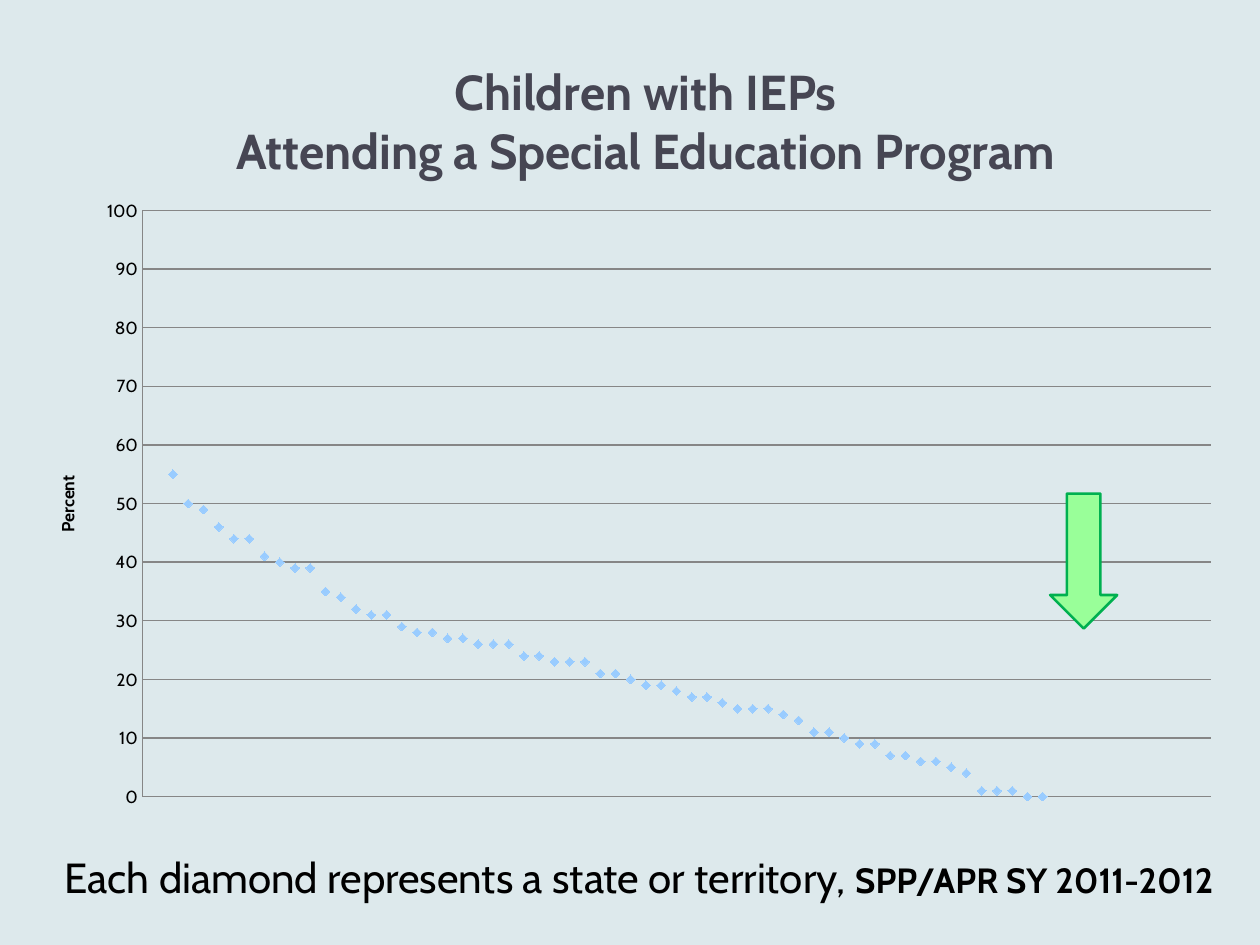
import pptx
import pptx.chart.data
import pptx.dml.color
import pptx.enum.chart
import pptx.enum.shapes
import pptx.enum.text
import pptx.oxml
import pptx.oxml.ns
from pptx.util import Cm, Pt

RGBColor = pptx.dml.color.RGBColor
BACKGROUND = RGBColor(0xDD, 0xE9, 0xEC)
TITLE_COLOR = RGBColor(0x46, 0x46, 0x53)
BLACK = RGBColor(0, 0, 0)
GRID = RGBColor(0x86, 0x86, 0x86)
DIAMOND = RGBColor(0x99, 0xCC, 0xFF)
ARROW_FILL = RGBColor(0x99, 0xFF, 0x99)
ARROW_LINE = RGBColor(0x00, 0xB0, 0x50)
FONT = "Cabin"

TITLE_LINES = ["Children with IEPs", "Attending a Special Education Program"]
CAPTION = [
    ("Each diamond represents a state or territory, ", 24, False),
    ("SPP/APR SY 2011-2012", 20, True),
]
# The first rank is empty, which keeps the diamonds off the axis.
PERCENTS = [
    None,
    55, 50, 49, 46, 44, 44, 41, 40, 39, 39, 35, 34, 32, 31, 31, 29, 28, 28, 27, 27,
    26, 26, 26, 24, 24, 23, 23, 23, 21, 21, 20, 19, 19, 18, 17, 17, 16, 15, 15, 15,
    14, 13, 11, 11, 10, 9, 9, 7, 7, 6, 6, 5, 4, 1, 1, 1, 0, 0,
]


def set_font(font, size, color, bold=False):
    font.name, font.size, font.bold = FONT, Pt(size), bold
    font.color.rgb = color


def manual_layout(x, y, width=None, height=None):
    """Return a c:layout element; places are fractions of the chart."""
    settings = [("layoutTarget", "inner")] if width else []
    settings += [("xMode", "edge"), ("yMode", "edge"), ("x", x), ("y", y)]
    if width:
        settings += [("w", width), ("h", height)]
    body = "".join(f'<c:{name} val="{value}"/>' for name, value in settings)
    return pptx.oxml.parse_xml(
        f'<c:layout {pptx.oxml.ns.nsdecls("c")}><c:manualLayout>{body}'
        "</c:manualLayout></c:layout>")


def replace_layout(parent, layout, index):
    for old in parent.findall(pptx.oxml.ns.qn("c:layout")):
        parent.remove(old)
    parent.insert(index, layout)


def number_points_by_order(series):
    """Drop the x values, so points count from 1, and the empty y points."""
    element = series._element
    element.remove(element.find(pptx.oxml.ns.qn("c:xVal")))
    for point in element.xpath("./c:yVal//c:pt"):
        if PERCENTS[int(point.get("idx"))] is None:
            point.getparent().remove(point)


def add_title(page):
    title = page.shapes.title
    title.left, title.top, title.width, title.height = Cm(1.05), Cm(1.05), Cm(23.93), Cm(2.74)
    frame = title.text_frame
    frame.vertical_anchor = pptx.enum.text.MSO_ANCHOR.MIDDLE
    para = frame.paragraphs[0]
    para.alignment = pptx.enum.text.PP_ALIGN.CENTER
    set_font(para.font, 28, TITLE_COLOR, True)
    for number, line in enumerate(TITLE_LINES):
        if number:
            para.add_line_break()
        para.add_run().text = line


def add_percent_chart(page):
    data = pptx.chart.data.XyChartData()
    points = data.add_series("Series 1")
    for rank, percent in enumerate(PERCENTS, 1):
        points.add_data_point(rank, percent)
    chart = page.shapes.add_chart(
        pptx.enum.chart.XL_CHART_TYPE.XY_SCATTER,
        Cm(0.2), Cm(1.93), Cm(24.28), Cm(17.15), data).chart
    chart.has_legend = chart.has_title = False
    set_font(chart.font, 10, BLACK)
    plot = chart.plots[0]
    plot.vary_by_categories = False

    series = plot.series[0]
    number_points_by_order(series)
    series.format.line.fill.background()
    marker = series.marker
    marker.style = pptx.enum.chart.XL_MARKER_STYLE.DIAMOND
    marker.size = 5
    marker.format.fill.solid()
    marker.format.fill.fore_color.rgb = DIAMOND
    marker.format.line.fill.background()

    ranks = chart.category_axis
    ranks.minimum_scale, ranks.maximum_scale = 0, 70
    ranks.has_major_gridlines = False
    ranks.visible = False

    axis = chart.value_axis
    axis.minimum_scale, axis.maximum_scale, axis.major_unit = 0, 100, 10
    axis.major_tick_mark = axis.minor_tick_mark = pptx.enum.chart.XL_TICK_MARK.NONE
    axis.tick_labels.number_format = "0"
    axis.tick_labels.number_format_is_linked = False
    axis.has_major_gridlines = True
    for line in (axis.format.line, axis.major_gridlines.format.line):
        line.color.rgb, line.width = GRID, Pt(0.75)

    frame = axis.axis_title.text_frame
    frame.text = "Percent"
    set_font(frame.paragraphs[0].font, 10, BLACK, True)
    title_xml = axis.axis_title._element
    body = title_xml.find(".//" + pptx.oxml.ns.qn("a:bodyPr"))
    body.set("rot", "-5400000")
    body.set("vert", "horz")
    replace_layout(title_xml, manual_layout(0.035, 0.443), 1)
    plot_area = chart._chartSpace.chart.plotArea
    replace_layout(plot_area, manual_layout(0.11, 0.135, 0.887, 0.689), 0)


def add_arrow(page):
    arrow = page.shapes.add_shape(
        pptx.enum.shapes.MSO_SHAPE.UP_ARROW, Cm(21.17), Cm(9.95), Cm(1.35), Cm(2.72))
    arrow.rotation = 180
    arrow.shadow.inherit = False
    arrow.fill.solid()
    arrow.fill.fore_color.rgb = ARROW_FILL
    arrow.line.color.rgb, arrow.line.width = ARROW_LINE, Pt(1.5)


def add_caption(page):
    box = page.shapes.add_textbox(Cm(1.05), Cm(17.04), Cm(23.93), Cm(1.28))
    box.text_frame.word_wrap = True
    para = box.text_frame.paragraphs[0]
    for text, size, bold in CAPTION:
        span = para.add_run()
        span.text = text
        set_font(span.font, size, BLACK, bold)


def main():
    deck = pptx.Presentation()
    deck.slide_width, deck.slide_height = Cm(25.4), Cm(19.05)
    page = deck.slides.add_slide(deck.slide_layouts[5])
    page.background.fill.solid()
    page.background.fill.fore_color.rgb = BACKGROUND
    add_title(page)
    add_percent_chart(page)
    add_arrow(page)
    add_caption(page)
    deck.save("out.pptx")


if __name__ == "__main__":
    main()
